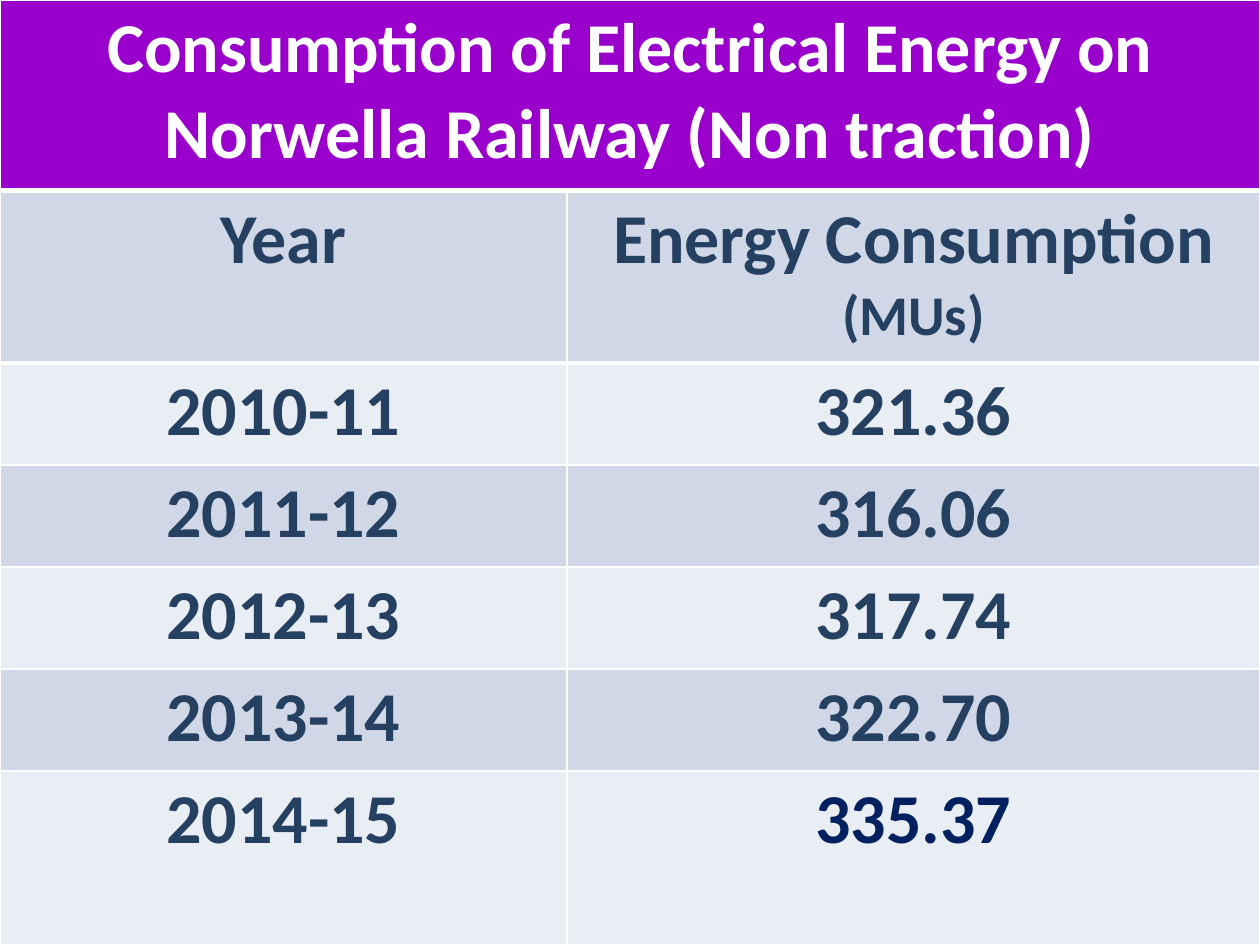
from lxml import etree
from pptx import Presentation, util as u
from pptx.dml.color import RGBColor
from pptx.enum import text
from pptx.oxml.ns import qn

COLORS = {
    "header": "9900CC",
    "white": "FFFFFF",
    "band_dark": "D0D8E8",
    "band_light": "E9EDF4",
    "body": "254061",
    "latest": "002060",
}
TITLE = "Consumption of Electrical Energy on Norwella Railway (Non traction)"
ROWS = [
    ("Year", "Energy Consumption\n(MUs)"),
    ("2010-11", "321.36"),
    ("2011-12", "316.06"),
    ("2012-13", "317.74"),
    ("2013-14", "322.70"),
    ("2014-15", "335.37"),
]
COLUMN_WIDTHS = [4.5, 5.5]
ROW_HEIGHTS = [1.51, 1.37] + [0.81] * 4 + [1.38]


class SlideBuilder:
    """Holds the text style and the current slide."""

    font = "Calibri"
    size = 40
    unit_size = 32

    def __init__(self, slide):
        self.slide = slide

    def table(self, widths, heights):
        frame = self.slide.shapes.add_table(
            len(heights), len(widths), u.Inches(0), u.Inches(0), u.Inches(10), u.Inches(7.5)
        )
        table = frame.table
        for column, width in zip(table.columns, widths):
            column.width = u.Inches(width)
        for row, height in zip(table.rows, heights):
            row.height = u.Inches(height)
        return table

    def cell(self, cell, content, fill, color):
        cell.fill.solid()
        cell.fill.fore_color.rgb = RGBColor.from_string(COLORS[fill])
        cell.text_frame.text = content
        for index, paragraph in enumerate(cell.text_frame.paragraphs):
            paragraph.alignment = text.PP_ALIGN.CENTER
            font = paragraph.runs[0].font
            font.name = self.font
            font.size = u.Pt(self.unit_size if index else self.size)
            font.bold = True
            font.color.rgb = RGBColor.from_string(COLORS[color])

    def border(self, cell, edge, width):
        line = etree.Element(qn(f"a:{edge}"), w=str(u.Pt(width)))
        fill = etree.SubElement(line, qn("a:solidFill"))
        etree.SubElement(fill, qn("a:srgbClr"), val=COLORS["white"])
        cell._tc.get_or_add_tcPr().insert(0, line)


def main():
    presentation = Presentation()
    presentation.slide_width = u.Inches(10)
    presentation.slide_height = u.Inches(7.5)
    builder = SlideBuilder(presentation.slides.add_slide(presentation.slide_layouts[6]))

    table = builder.table(COLUMN_WIDTHS, ROW_HEIGHTS)
    table.cell(0, 0).merge(table.cell(0, 1))
    builder.cell(table.cell(0, 0), TITLE, "header", "white")
    for row, values in enumerate(ROWS, start=1):
        fill = "band_dark" if row % 2 else "band_light"
        for column, value in enumerate(values):
            is_latest = row == len(ROWS) and column == 1
            color = "latest" if is_latest else "body"
            builder.cell(table.cell(row, column), value, fill, color)
    for column in range(len(COLUMN_WIDTHS)):
        builder.border(table.cell(0, column), "lnB", 3)
        builder.border(table.cell(1, column), "lnT", 3)

    presentation.save("out.pptx")


if __name__ == "__main__":
    main()
